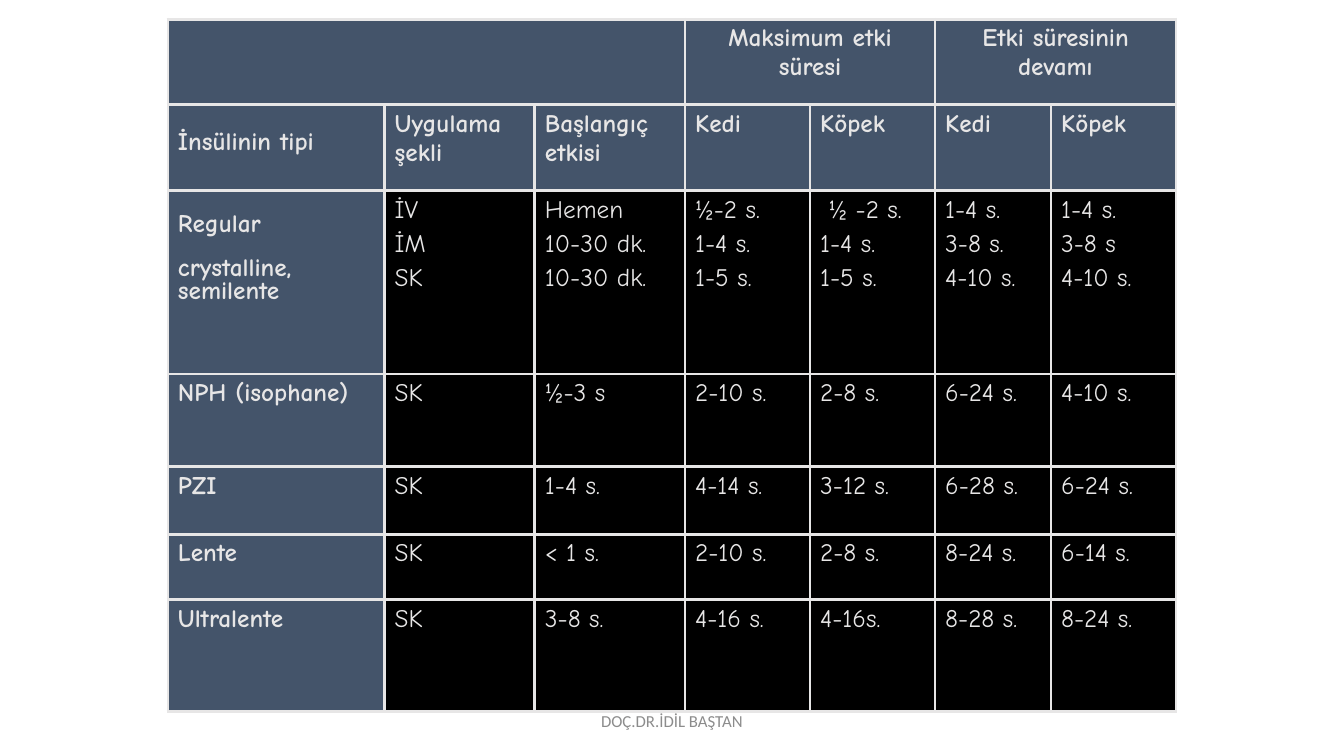
from lxml import etree
from pptx import Presentation
from pptx.dml.color import RGBColor
from pptx.enum.text import MSO_ANCHOR, PP_ALIGN
from pptx.oxml.ns import qn
from pptx.util import Inches, Pt

# Content: a cell is one text, one line per paragraph
GROUPS = {3: "Maksimum etki süresi", 5: "Etki süresinin devamı"}
HEADINGS = ["İnsülinin tipi", "Uygulama şekli", "Başlangıç etkisi",
            "Kedi", "Köpek", "Kedi", "Köpek"]
INSULINS = [
    ["Regular crystalline,\nsemilente", "İV\nİM\nSK", "Hemen\n10-30 dk.\n10-30 dk.",
     "½-2 s.\n1-4 s.\n1-5 s.", " ½ -2 s.\n1-4 s.\n1-5 s.",
     "1-4 s.\n3-8 s.\n4-10 s.", "1-4 s.\n3-8 s\n4-10 s."],
    ["NPH (isophane)", "SK", "½-3 s", "2-10 s.", "2-8 s.", "6-24 s.", "4-10 s."],
    ["PZI", "SK", "1-4 s.", "4-14 s.", "3-12 s.", "6-28 s.", "6-24 s."],
    ["Lente", "SK", "< 1 s.", "2-10 s.", "2-8 s.", "8-24 s.", "6-14 s."],
    ["Ultralente", "SK", "3-8 s.", "4-16 s.", "4-16s.", "8-28 s.", "8-24 s."],
]
FOOTER = "DOÇ.DR.İDİL BAŞTAN"
LINE_SPACING = {(1, 0): [1.6], (2, 0): [1.5, 0.5]}

# Layout in inches
SLIDE_W, SLIDE_H = 13.33, 7.5
COLUMNS = [2.15, 1.49, 1.49, 1.24, 1.24, 1.15, 1.24]
ROWS = [0.85, 0.85, 1.82, 0.92, 0.67, 0.65, 1.11]
TABLE_TOP = 0.19
FOOTER_W, FOOTER_H, FOOTER_TOP = 4.5, 0.4, 6.95
COLORS = {"head": "44546A", "body": "000000", "light": "E7E6E6", "footer": "8C8C8C"}


def write(frame, text, font="Comic Neue", size=18, color="light", bold=False,
          align=PP_ALIGN.LEFT, spacings=()):
    for i, line in enumerate(text.split("\n")):
        para = frame.paragraphs[0] if i == 0 else frame.add_paragraph()
        para.alignment = align
        if i:
            para.space_before = Pt(size * 0.2)
        if i < len(spacings):
            para.line_spacing = spacings[i]
        run = para.add_run()
        run.text = line
        run.font.name, run.font.size, run.font.bold = font, Pt(size), bold
        run.font.color.rgb = RGBColor.from_string(COLORS[color])


def paint(cell, color):
    cell.fill.solid()
    cell.fill.fore_color.rgb = RGBColor.from_string(COLORS[color])
    props = cell._tc.get_or_add_tcPr()
    for i, side in enumerate(("lnL", "lnR", "lnT", "lnB")):
        border = etree.Element(qn("a:" + side), w=str(Pt(2.25)))
        fill = etree.SubElement(border, qn("a:solidFill"))
        etree.SubElement(fill, qn("a:srgbClr"), val=COLORS["light"])
        props.insert(i, border)


prs = Presentation()
prs.slide_width, prs.slide_height = Inches(SLIDE_W), Inches(SLIDE_H)
slide = prs.slides.add_slide(prs.slide_layouts[6])

# Insulin table, centred across the slide
width = sum(COLUMNS)
table = slide.shapes.add_table(
    len(ROWS), len(COLUMNS), Inches((SLIDE_W - width) / 2), Inches(TABLE_TOP),
    Inches(width), Inches(sum(ROWS))).table
for column, size in zip(table.columns, COLUMNS):
    column.width = Inches(size)
for row, size in zip(table.rows, ROWS):
    row.height = Inches(size)

group_row = [GROUPS.get(c, "") for c in range(len(COLUMNS))]
for r, texts in enumerate([group_row, HEADINGS] + INSULINS):
    for c, text in enumerate(texts):
        cell = table.cell(r, c)
        is_head = r < 2 or c == 0
        paint(cell, "head" if is_head else "body")
        if text:
            write(cell.text_frame, text, bold=is_head,
                  align=PP_ALIGN.CENTER if r == 0 else PP_ALIGN.LEFT,
                  spacings=LINE_SPACING.get((r, c), ()))
for first, last in ((0, 2), (3, 4), (5, 6)):
    table.cell(0, first).merge(table.cell(0, last))

# Footer
footer = slide.shapes.add_textbox(
    Inches((SLIDE_W - FOOTER_W) / 2), Inches(FOOTER_TOP),
    Inches(FOOTER_W), Inches(FOOTER_H)).text_frame
footer.word_wrap = True
footer.vertical_anchor = MSO_ANCHOR.MIDDLE
write(footer, FOOTER, font="Calibri", size=12, color="footer", align=PP_ALIGN.CENTER)

prs.save("out.pptx")
